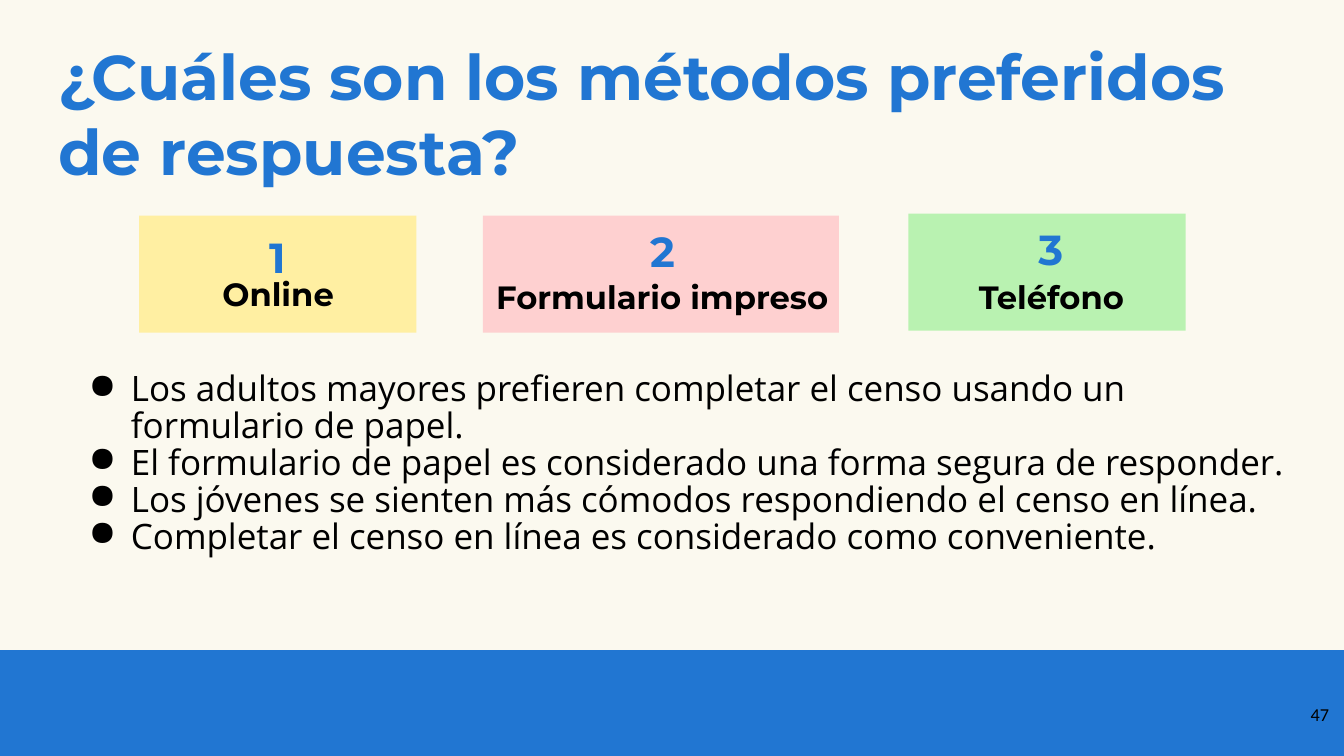
"""Build the slide on preferred census response methods."""
from lxml.etree import SubElement
from pptx import Presentation
from pptx.dml.color import RGBColor
from pptx.enum.shapes import MSO_SHAPE as Shape
from pptx.enum.text import PP_ALIGN as Align
from pptx.oxml.ns import qn
from pptx.util import Inches, Pt

COLORS = {"cream": "FBF9EF", "blue": "2176D2", "black": "000000",
          "yellow": "FFEFA2", "pink": "FED0D0", "green": "B9F2B1"}
TITLE = "¿Cuáles son los métodos preferidos de respuesta?"
METHODS = [
    {"label": "Online", "color": "yellow", "card": (1.38, 2.14, 2.75),
     "label_at": (0.98, 2.67), "number_at": (2.57, 2.25)},
    {"label": "Formulario impreso", "color": "pink", "card": (4.79, 2.14, 3.53),
     "label_at": (4.79, 2.7), "number_at": (6.35, 2.19)},
    {"label": "Teléfono", "color": "green", "card": (9.01, 2.12, 2.75),
     "label_at": (8.65, 2.7), "number_at": (10.2, 2.17)},
]
FINDINGS = [
    "Los adultos mayores prefieren completar el censo usando un formulario de papel.",
    "El formulario de papel es considerado una forma segura de responder.",
    "Los jóvenes se sienten más cómodos respondiendo el censo en línea.",
    "Completar el censo en línea es considerado como conveniente.",
]
PAGE_NUMBER = "47"
CARD_HEIGHT = 1.16
LABEL_SIZE = (3.56, 0.64)
NUMBER_SIZE = (0.52, 0.61)
STYLES = {
    "title": {"name": "Montserrat", "size": Pt(45), "bold": True, "color": "blue"},
    "label": {"name": "Montserrat", "size": Pt(23), "bold": True, "color": "black"},
    "number": {"name": "Montserrat", "size": Pt(30), "bold": True, "color": "blue"},
    "finding": {"name": "Open Sans", "size": Pt(25), "color": "black"},
    "page": {"name": "Calibri", "size": Pt(13), "color": "black"},
}


def rgb(color):
    """Return the named colour."""
    return RGBColor.from_string(COLORS[color])


def add_block(slide, box, color):
    """Add a plain filled rectangle."""
    shape = slide.shapes.add_shape(Shape.RECTANGLE, *map(Inches, box))
    shape.shadow.inherit = False
    shape.fill.solid()
    shape.fill.fore_color.rgb = rgb(color)
    shape.line.fill.background()


def add_bullet(paragraph):
    """Give a paragraph a hanging round bullet."""
    properties = paragraph._p.get_or_add_pPr()
    properties.set("marL", str(Inches(0.5)))
    properties.set("indent", str(Inches(-0.42)))
    bullet_color = SubElement(properties, qn("a:buClr"))
    SubElement(bullet_color, qn("a:srgbClr"), val=COLORS["black"])
    SubElement(properties, qn("a:buChar"), char="●")


def add_text(slide, box, lines, style, align=Align.LEFT, bullets=False):
    """Add a wrapped text box with one paragraph per line."""
    frame = slide.shapes.add_textbox(*map(Inches, box)).text_frame
    frame.word_wrap = True
    for index, line in enumerate(lines):
        paragraph = frame.paragraphs[0] if index == 0 else frame.add_paragraph()
        paragraph.alignment = align
        if bullets:
            paragraph.line_spacing = 0.88
            add_bullet(paragraph)
        font = paragraph.add_run().font
        paragraph.runs[0].text = line
        for key, value in STYLES[style].items():
            if key == "color":
                font.color.rgb = rgb(value)
            else:
                setattr(font, key, value)


def main():
    """Assemble and save the slide."""
    presentation = Presentation()
    presentation.slide_width = Inches(13.33)
    presentation.slide_height = Inches(7.5)
    slide = presentation.slides.add_slide(presentation.slide_layouts[6])
    slide.background.fill.solid()
    slide.background.fill.fore_color.rgb = rgb("cream")

    add_block(slide, (0, 6.45, 13.33, 1.05), "blue")
    add_text(slide, (0.48, 0.32, 12.53, 1.6), [TITLE], "title")
    for number, method in enumerate(METHODS, 1):
        add_block(slide, (*method["card"], CARD_HEIGHT), method["color"])
        add_text(slide, (*method["label_at"], *LABEL_SIZE), [method["label"]],
                 "label", Align.CENTER)
        add_text(slide, (*method["number_at"], *NUMBER_SIZE), [str(number)], "number")
    add_text(slide, (0.7, 3.64, 12.18, 2.3), FINDINGS, "finding", bullets=True)
    add_text(slide, (12.48, 6.93, 0.8, 0.57), [PAGE_NUMBER], "page", Align.RIGHT)
    presentation.save("out.pptx")


if __name__ == "__main__":
    main()
